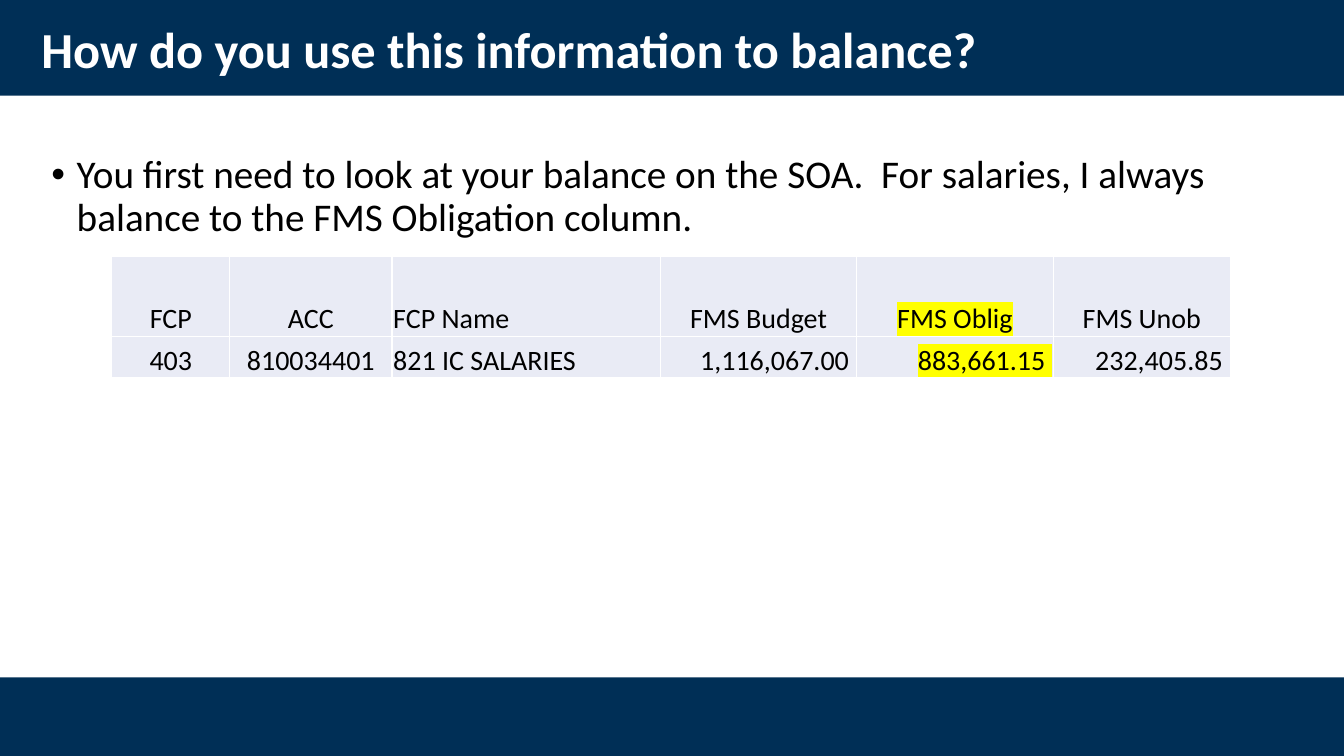
from dataclasses import dataclass

from lxml import etree
from pptx import Presentation
from pptx.dml.color import RGBColor
from pptx.enum.shapes import MSO_SHAPE
from pptx.enum.text import MSO_ANCHOR, MSO_AUTO_SIZE, PP_ALIGN
from pptx.oxml.ns import qn
from pptx.util import Cm, Pt

RECT = MSO_SHAPE.RECTANGLE
TOP, MIDDLE, BOTTOM = MSO_ANCHOR.TOP, MSO_ANCHOR.MIDDLE, MSO_ANCHOR.BOTTOM
LEFT, CENTER, RIGHT = PP_ALIGN.LEFT, PP_ALIGN.CENTER, PP_ALIGN.RIGHT
NO_FIT = MSO_AUTO_SIZE.NONE


@dataclass(frozen=True)
class Theme:
    font: str = "Calibri"
    navy: str = "002F56"
    white: str = "FFFFFF"
    black: str = "000000"
    cell: str = "E9EBF5"
    marker: str = "FFFF00"
    title_size: int = 36
    body_size: int = 28
    table_size: int = 20


THEME = Theme()
SLIDE_W, SLIDE_H = 33.87, 19.05

# Boxes in centimetres: left, top, width, height
TOP_BAR = (0, 0, SLIDE_W, 2.41)
BOTTOM_BAR = (0, 17.07, SLIDE_W, SLIDE_H - 17.07)
TITLE_BOX = (0.79, 0.46, 29.21, 1.73)
BODY_BOX = (1.04, 3.78, 31.52, 12.09)
TABLE_BOX = (2.82, 6.45, 28.19, 3.07)

COLUMN_WIDTHS = (2.97, 4.09, 6.76, 4.95, 4.95, 4.47)
ROW_HEIGHTS = (2.03, 1.04)
MARKED_COLUMN = 4
ROWS = (
    ("FCP", "ACC", "FCP Name", "FMS Budget", "FMS Oblig", "FMS Unob"),
    ("403", "810034401", "821 IC SALARIES",
     "1,116,067.00 ", "883,661.15 ", "232,405.85 "),
)
ALIGNMENTS = (
    (CENTER, CENTER, LEFT, CENTER, CENTER, CENTER),
    (CENTER, CENTER, LEFT, RIGHT, RIGHT, RIGHT),
)


def apply(target, formats):
    for name, value in formats.items():
        setattr(target, name, value)


def place(sp, box):
    apply(sp, dict(zip(("left", "top", "width", "height"), map(Cm, box))))


def write(p, text, size, color, bold=False):
    r = p.add_run()
    r.text = text
    apply(r.font, {"size": Pt(size), "bold": bold, "name": THEME.font})
    r.font.color.rgb = RGBColor.from_string(color)
    return r


def add_color(parent, color):
    fill = etree.SubElement(parent, qn("a:solidFill"))
    etree.SubElement(fill, qn("a:srgbClr"), val=color)


def highlight(r):
    mark = etree.Element(qn("a:highlight"))
    etree.SubElement(mark, qn("a:srgbClr"), val=THEME.marker)
    r.font.fill  # the highlight follows the text fill
    r._r.rPr.find(qn("a:solidFill")).addnext(mark)


def add_bar(slide, box):
    sp = slide.shapes.add_shape(RECT, *map(Cm, box))
    sp.shadow.inherit = False
    sp.fill.solid()
    sp.fill.fore_color.rgb = RGBColor.from_string(THEME.navy)
    sp.line.fill.background()
    # Bars lie behind the title
    slide.shapes.title._element.addprevious(sp._element)


def fill_title(sp, box, text):
    place(sp, box)
    tf = sp.text_frame
    apply(tf, {"word_wrap": True, "auto_size": NO_FIT,
               "vertical_anchor": MIDDLE})
    p = tf.paragraphs[0]
    apply(p, {"alignment": LEFT, "line_spacing": 0.9})
    write(p, text, THEME.title_size, THEME.white, bold=True)


def fill_body(sp, box, text):
    place(sp, box)
    tf = sp.text_frame
    apply(tf, {"word_wrap": True, "auto_size": NO_FIT,
               "vertical_anchor": TOP})
    p = tf.paragraphs[0]
    apply(p, {"alignment": LEFT, "line_spacing": 0.9, "space_before": Pt(0)})
    pPr = p._p.get_or_add_pPr()
    pPr.set("marL", str(Cm(0.64)))
    pPr.set("indent", str(-Cm(0.64)))
    etree.SubElement(pPr, qn("a:buFont"), typeface="Arial")
    etree.SubElement(pPr, qn("a:buChar"), char="•")
    write(p, text, THEME.body_size, THEME.black)


def format_cell(cell):
    tcPr = cell._tc.get_or_add_tcPr()
    for side in ("lnL", "lnR", "lnT", "lnB"):
        ln = etree.SubElement(tcPr, qn(f"a:{side}"), w=str(Pt(1)))
        add_color(ln, THEME.white)
    cell.fill.solid()
    cell.fill.fore_color.rgb = RGBColor.from_string(THEME.cell)
    apply(cell, {"vertical_anchor": BOTTOM, "margin_left": Cm(0.03),
                 "margin_right": Cm(0.03), "margin_top": Cm(0.03),
                 "margin_bottom": 0})


def add_balance_table(slide, box):
    table = slide.shapes.add_table(
        len(ROWS), len(COLUMN_WIDTHS), *map(Cm, box)).table
    apply(table, {"first_row": False, "horz_banding": False})
    for column, width in zip(table.columns, COLUMN_WIDTHS):
        column.width = Cm(width)
    for row, height in zip(table.rows, ROW_HEIGHTS):
        row.height = Cm(height)
    for i, (texts, alignments) in enumerate(zip(ROWS, ALIGNMENTS)):
        for j, (text, alignment) in enumerate(zip(texts, alignments)):
            cell = table.cell(i, j)
            format_cell(cell)
            p = cell.text_frame.paragraphs[0]
            p.alignment = alignment
            r = write(p, text, THEME.table_size, THEME.black)
            if j == MARKED_COLUMN:
                highlight(r)


def build_balance_slide(prs):
    slide = prs.slides.add_slide(prs.slide_layouts[1])

    # Bars at the top and bottom
    for box in (TOP_BAR, BOTTOM_BAR):
        add_bar(slide, box)

    # Title and bullet
    fill_title(slide.shapes.title, TITLE_BOX,
               "How do you use this information to balance?")
    fill_body(slide.placeholders[1], BODY_BOX,
              "You first need to look at your balance on the SOA.  For "
              "salaries, I always balance to the FMS Obligation column.")

    # SOA balance
    add_balance_table(slide, TABLE_BOX)


def main():
    prs = Presentation()
    apply(prs, {"slide_width": Cm(SLIDE_W), "slide_height": Cm(SLIDE_H)})
    build_balance_slide(prs)
    prs.save("out.pptx")


if __name__ == "__main__":
    main()
